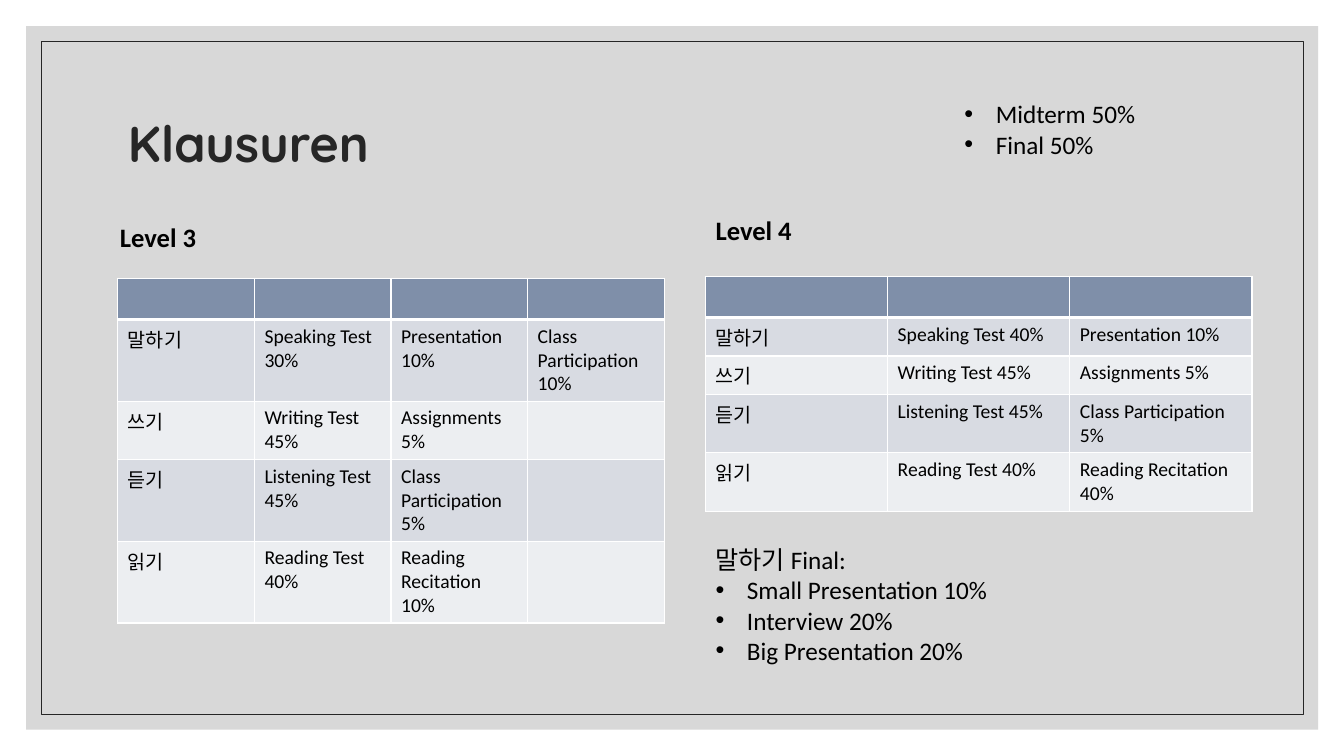
from pptx import Presentation
from pptx.dml.color import RGBColor
from pptx.enum.shapes import MSO_SHAPE as Preset
from pptx.enum.text import MSO_ANCHOR as Anchor, MSO_AUTO_SIZE as AutoSize, PP_ALIGN as Align
from pptx.oxml.ns import qn
from pptx.util import Cm, Pt
from lxml.etree import SubElement

COLORS = {"panel": "BFBFBF", "ink": "262626", "text": "000000", "border": "FFFFFF",
          "header": "7F8FA9", "odd": "D8DBE2", "even": "ECEEF1"}

# Boxes are left, top, width, height in cm.
PANEL_BOX = (0.66, 0.66, 32.56, 17.73)
FRAME_BOX = (1.04, 1.04, 31.8, 16.97)
TITLE = ("Klausuren", (2.97, 1.78, 27.94, 3.81))

# Layout placeholder number, wording, box
LEVELS = [
    (1, "Level 3", (2.77, 5.08, 12.95, 1.78)),
    (3, "Level 4", (17.78, 4.9, 12.95, 1.78)),
]
# Layout placeholder number, heading, bullets, box
LISTS = [
    (2, None, ["Midterm 50%", "Final 50%"], (24.05, 2.36, 7.06, 1.8)),
    (4, "말하기 Final:",
     ["Small Presentation 10%", "Interview 20%", "Big Presentation 20%"],
     (17.78, 13.59, 12.95, 3.33)),
]
TABLE_WIDTH = 13.77
# Left, top, row heights, rows below the blank header
TABLES = [
    (17.78, 6.96, (1.04, 0.97, 0.97, 1.47, 1.47), [
        ("말하기", "Speaking Test 40%", "Presentation 10%"),
        ("쓰기", "Writing Test 45%", "Assignments 5%"),
        ("듣기", "Listening Test 45%", "Class Participation 5%"),
        ("읽기", "Reading Test 40%", "Reading Recitation 40%"),
    ]),
    (2.97, 7.01, (1.04, 2.06, 1.47, 2.06, 2.06), [
        ("말하기", "Speaking Test 30%", "Presentation 10%", "Class Participation 10%"),
        ("쓰기", "Writing Test 45%", "Assignments 5%", ""),
        ("듣기", "Listening Test 45%", "Class Participation 5%", ""),
        ("읽기", "Reading Test 40%", "Reading Recitation 10%", ""),
    ]),
]


def rgb(name):
    return RGBColor.from_string(COLORS[name])


def place(shape, box):
    shape.left, shape.top, shape.width, shape.height = (Cm(length) for length in box)


def add_span(para, words, size, color="text", font="Calibri", bold=False):
    span = para.add_run()
    span.text = words
    span.font.size = Pt(size)
    span.font.name = font
    span.font.bold = bold
    span.font.color.rgb = rgb(color)


def set_bullet(para, bulleted):
    props = para._p.get_or_add_pPr()
    indent = Cm(0.79) if bulleted else 0
    props.set("marL", str(indent))
    props.set("indent", str(-indent))
    if bulleted:
        SubElement(props, qn("a:buFont"), typeface="Arial")
        SubElement(props, qn("a:buChar"), char="•")
    else:
        SubElement(props, qn("a:buNone"))


def add_backdrop(page):
    """Put the grey panel and its thin frame behind the placeholders."""
    panel, frame = (page.shapes.add_shape(Preset.RECTANGLE, *map(Cm, box))
                    for box in (PANEL_BOX, FRAME_BOX))
    panel.fill.solid()
    panel.fill.fore_color.rgb = rgb("panel")
    tint = panel.element.spPr.find(qn("a:solidFill"))[0]
    SubElement(tint, qn("a:alpha"), val="60000")
    panel.line.fill.background()
    frame.fill.background()
    frame.line.color.rgb = rgb("ink")
    frame.line.width = Pt(0.5)
    for depth, shape in enumerate((panel, frame), start=2):
        shape.shadow.inherit = False
        shape.element.getparent().insert(depth, shape.element)


def fill_title(title):
    words, box = TITLE
    place(title, box)
    title.text_frame.auto_size = AutoSize.NONE
    title.text_frame.vertical_anchor = Anchor.MIDDLE
    para = title.text_frame.paragraphs[0]
    para.alignment = Align.LEFT
    para.line_spacing = 0.9
    add_span(para, words, 36, "ink", "Quicksand", True)


def fill_level(holder, words, box):
    place(holder, box)
    holder.text_frame.auto_size = AutoSize.NONE
    holder.text_frame.vertical_anchor = Anchor.MIDDLE
    para = holder.text_frame.paragraphs[0]
    para.space_before = Pt(0)
    add_span(para, words, 19, bold=True)


def fill_list(holder, heading, bullets, box):
    place(holder, box)
    frame = holder.text_frame
    frame.auto_size = AutoSize.SHAPE_TO_FIT_TEXT
    frame.vertical_anchor = Anchor.TOP
    lines = [(heading, False)] if heading else []
    lines += [(words, True) for words in bullets]
    for number, (words, bulleted) in enumerate(lines):
        para = frame.add_paragraph() if number else frame.paragraphs[0]
        para.space_before = Pt(0)
        set_bullet(para, bulleted)
        add_span(para, words, 18)


def style_cell(cell, row):
    """Draw white borders, thick under the header, and the banded fill."""
    props = cell._tc.get_or_add_tcPr()
    thick_sides = {0: "B", 1: "T"}.get(row, "")
    for side in "LRTB":
        width = Pt(3 if side == thick_sides else 1)
        line = SubElement(props, qn(f"a:ln{side}"), w=str(width))
        fill = SubElement(line, qn("a:solidFill"))
        SubElement(fill, qn("a:srgbClr"), val=COLORS["border"])
    cell.fill.solid()
    cell.fill.fore_color.rgb = rgb("header" if row == 0 else "odd" if row % 2 else "even")


def add_grading_table(page, left, top, heights, rows):
    columns = len(rows[0])
    grid = [("",) * columns] + rows
    table = page.shapes.add_table(len(grid), columns, Cm(left), Cm(top),
                                  Cm(TABLE_WIDTH), Cm(sum(heights))).table
    for column in table.columns:
        column.width = Cm(TABLE_WIDTH / columns)
    for row, (height, texts) in enumerate(zip(heights, grid)):
        table.rows[row].height = Cm(height)
        for column, words in enumerate(texts):
            cell = table.cell(row, column)
            style_cell(cell, row)
            if words:
                add_span(cell.text_frame.paragraphs[0], words, 14)


def main():
    deck = Presentation()
    deck.slide_width, deck.slide_height = Cm(33.87), Cm(19.05)
    page = deck.slides.add_slide(deck.slide_layouts.get_by_name("Comparison"))
    holders = {holder.placeholder_format.idx: holder for holder in page.placeholders}
    add_backdrop(page)
    fill_title(page.shapes.title)
    for number, words, box in LEVELS:
        fill_level(holders[number], words, box)
    for number, heading, bullets, box in LISTS:
        fill_list(holders[number], heading, bullets, box)
    for table in TABLES:
        add_grading_table(page, *table)
    deck.save("out.pptx")


if __name__ == "__main__":
    main()
